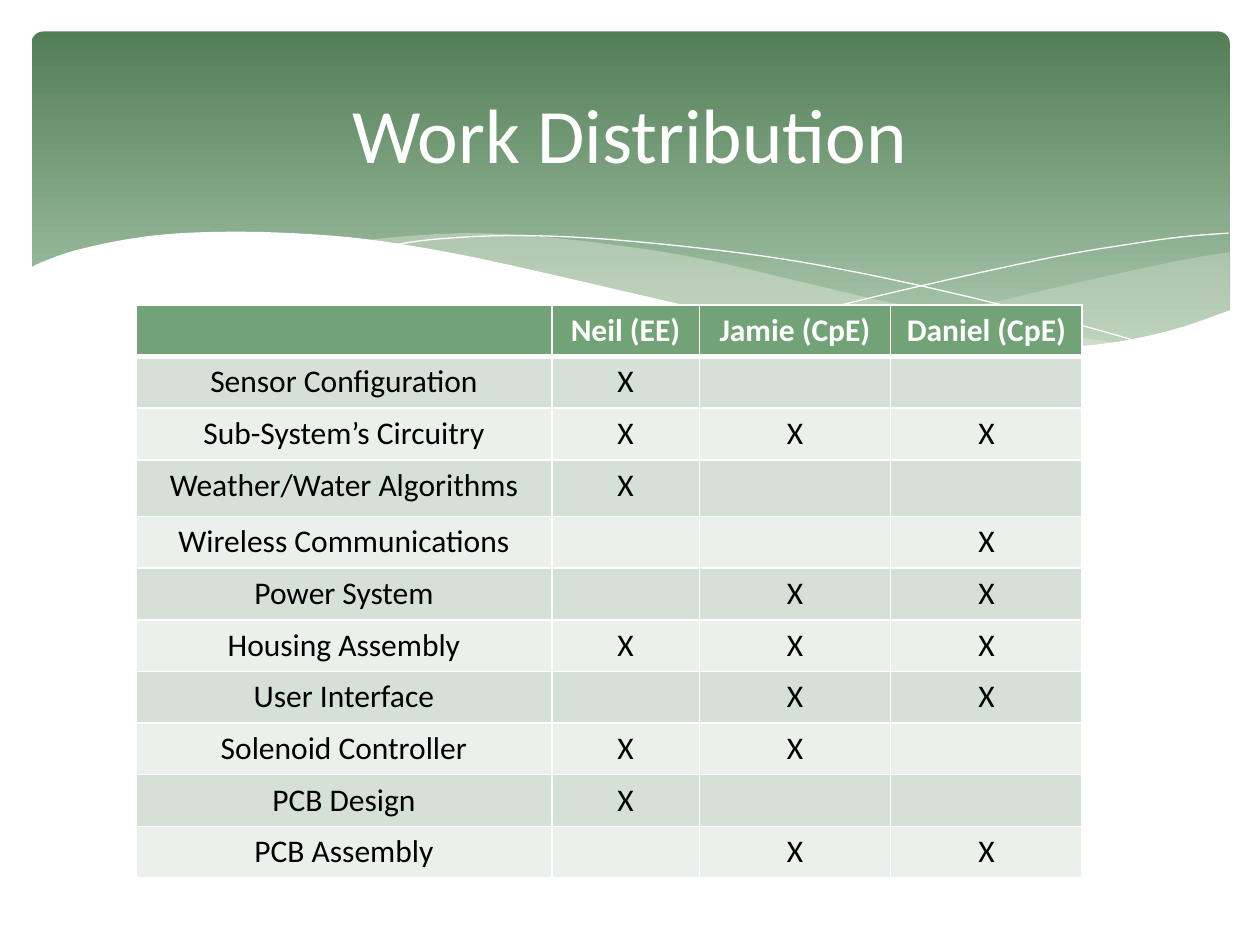
from lxml.etree import SubElement
from pptx import Presentation
from pptx.dml.color import RGBColor
from pptx.enum.shapes import MSO_SHAPE
from pptx.enum.text import MSO_ANCHOR, PP_ALIGN
from pptx.oxml.ns import qn
from pptx.util import Inches, Pt

TITLE = "Work Distribution"
PEOPLE = ["Neil (EE)", "Jamie (CpE)", "Daniel (CpE)"]
TASKS = [  # task, then one mark per person
    ("Sensor Configuration", "X", "", ""),
    ("Sub-System’s Circuitry", "X", "X", "X"),
    ("Weather/Water Algorithms", "X", "", ""),
    ("Wireless Communications", "", "", "X"),
    ("Power System", "", "X", "X"),
    ("Housing Assembly", "X", "X", "X"),
    ("User Interface", "", "X", "X"),
    ("Solenoid Controller", "X", "X", ""),
    ("PCB Design", "X", "", ""),
    ("PCB Assembly", "", "X", "X"),
]
COLS = [3.3, 1.17, 1.52, 1.52]
ROW, TALL, TALL_AT = 0.41, 0.45, 3

THEME = {
    "font": "Calibri", "title": 44, "body": 18,
    "white": "FFFFFF", "black": "000000", "head": "72A376",
    "bands": ["D5E0D6", "EBF0EC"], "wave": "EAEBDE",
    "top": "527E56", "fade": "AAC8AD",
}

# Each wave is a list of edges; an edge is a smooth curve through its points.
RIGHT = [
    [(9.76, 2), (9.35, 2.07), (8.61, 2.23), (7.79, 2.42), (7.06, 2.57), (6.61, 2.65)],
    [(6.61, 2.65), (7.19, 2.72), (7.69, 2.77), (8.24, 2.77), (8.72, 2.74),
     (9.13, 2.67), (9.49, 2.57), (9.76, 2.47)],
]
MIDDLE = [
    [(8.93, 2.73), (8.07, 2.6), (7.06, 2.4), (6.29, 2.22), (5.69, 2.08),
     (5.14, 1.98), (4.42, 1.89), (3.8, 1.85), (3.28, 1.87), (2.86, 1.91)],
    [(2.86, 1.91), (3.62, 2.03), (4.49, 2.22), (5.3, 2.4), (6.01, 2.55),
     (6.65, 2.66), (7.22, 2.74), (7.85, 2.78), (8.38, 2.78), (8.93, 2.73)],
]
FRONT = [
    [(9.77, 2.46), (9.3, 2.62), (8.75, 2.73), (8.09, 2.77), (7.44, 2.74),
     (6.68, 2.65), (5.79, 2.5), (5.03, 2.33), (4.47, 2.2), (3.65, 2.02),
     (2.92, 1.9), (2.3, 1.85), (1.77, 1.84), (1.32, 1.86), (0.95, 1.91),
     (0.59, 1.99), (0.36, 2.07), (0.23, 2.13)],
    [(0.23, 3.29), (9.77, 3.29)],
]
FALLING = [[(3.09, 1.95), (3.44, 1.9), (4.01, 1.87), (4.69, 1.89), (5.56, 1.97),
            (6.36, 2.08), (7.27, 2.26), (8.31, 2.51), (9.07, 2.72)]]
RISING = [[(6.13, 2.57), (6.72, 2.41), (7.48, 2.23), (8.36, 2.04),
           (8.95, 1.94), (9.38, 1.88), (9.75, 1.85)]]


def color(hue):
    return RGBColor.from_string(hue)


def smooth(edge, steps=5):
    """Sample a Catmull-Rom curve through the points of an edge."""
    ends = [edge[0], *edge, edge[-1]]
    out = [edge[0]]
    for a, b, c, d in zip(ends, ends[1:], ends[2:], ends[3:]):
        for i in range(1, steps + 1):
            t = i / steps
            out.append(tuple(
                q + t / 2 * (r - p + t * (2 * p - 5 * q + 4 * r - s
                                          + t * (3 * q - p - 3 * r + s)))
                for p, q, r, s in zip(a, b, c, d)))
    return out


def draw(slide, edges, fill=None, alpha=100):
    """Draw a filled wave, or a white hairline when there is no fill."""
    dots = [(Inches(x), Inches(y)) for edge in edges for x, y in smooth(edge)]
    pen = slide.shapes.build_freeform(*dots[0])
    pen.add_line_segments(dots[1:], close=bool(fill))
    shape = pen.convert_to_shape()
    shape.shadow.inherit = False
    if not fill:
        shape.fill.background()
        shape.line.color.rgb = color(THEME["white"])
        shape.line.width = Pt(0)
        return
    shape.line.fill.background()
    shape.fill.solid()
    shape.fill.fore_color.rgb = color(fill)
    if alpha < 100:
        tint = next(shape.element.iter(qn("a:srgbClr")))
        SubElement(tint, qn("a:alpha"), val=str(alpha * 1000))


def write(frame, text, size, hue, bold=False):
    para = frame.paragraphs[0]
    para.alignment = PP_ALIGN.CENTER
    run = para.add_run()
    run.text = text
    font = run.font
    font.name, font.size, font.bold = THEME["font"], Pt(size), bold
    font.color.rgb = color(hue)


def border(cell, **widths):
    props = cell._tc.get_or_add_tcPr()
    for side in "LRTB":
        line = SubElement(props, qn(f"a:ln{side}"), w=str(Pt(widths.get(side, 1))))
        fill = SubElement(line, qn("a:solidFill"))
        SubElement(fill, qn("a:srgbClr"), val=THEME["white"])


def banner(slide):
    box = slide.shapes.add_shape(MSO_SHAPE.ROUNDED_RECTANGLE, Inches(0.25),
                                 Inches(0.25), Inches(9.51), Inches(2.7))
    box.adjustments[0] = 0.034
    box.shadow.inherit = False
    box.line.fill.background()
    box.fill.gradient()
    box.fill.gradient_angle = 270
    stops = zip(box.fill.gradient_stops, [("top", 0), ("fade", 0.9)])
    for stop, (name, place) in stops:
        stop.color.rgb = color(THEME[name])
        stop.position = place
    draw(slide, RIGHT, THEME["wave"], 29)
    draw(slide, MIDDLE, THEME["wave"], 40)
    draw(slide, FALLING)
    draw(slide, RISING)
    draw(slide, FRONT, THEME["white"])


def grid(slide):
    rows = [("", *PEOPLE), *TASKS]
    highs = [TALL if i == TALL_AT else ROW for i in range(len(rows))]
    table = slide.shapes.add_table(
        len(rows), len(COLS), Inches(1.08), Inches(2.42),
        Inches(sum(COLS)), Inches(sum(highs))).table
    for col, wide in zip(table.columns, COLS):
        col.width = Inches(wide)
    for i, (row, high) in enumerate(zip(rows, highs)):
        table.rows[i].height = Inches(high)
        head = i == 0
        fill = THEME["head"] if head else THEME["bands"][(i - 1) % 2]
        for j, text in enumerate(row):
            cell = table.cell(i, j)
            border(cell, T=3 if i == 1 else 1, B=3 if head else 1)
            cell.fill.solid()
            cell.fill.fore_color.rgb = color(fill)
            if text:
                write(cell.text_frame, text, THEME["body"],
                      THEME["white" if head else "black"], bold=head)


def main():
    deck = Presentation()
    deck.slide_width, deck.slide_height = Inches(10), Inches(7.5)
    slide = deck.slides.add_slide(deck.slide_layouts[5])
    banner(slide)
    grid(slide)
    title = slide.shapes.title
    title.left, title.top = Inches(0.5), Inches(0.37)
    title.width, title.height = Inches(9), Inches(1.37)
    title.text_frame.vertical_anchor = MSO_ANCHOR.MIDDLE
    write(title.text_frame, TITLE, THEME["title"], THEME["white"])
    slide.shapes.element.append(title.element)  # bring to front
    deck.save("out.pptx")


if __name__ == "__main__":
    main()
